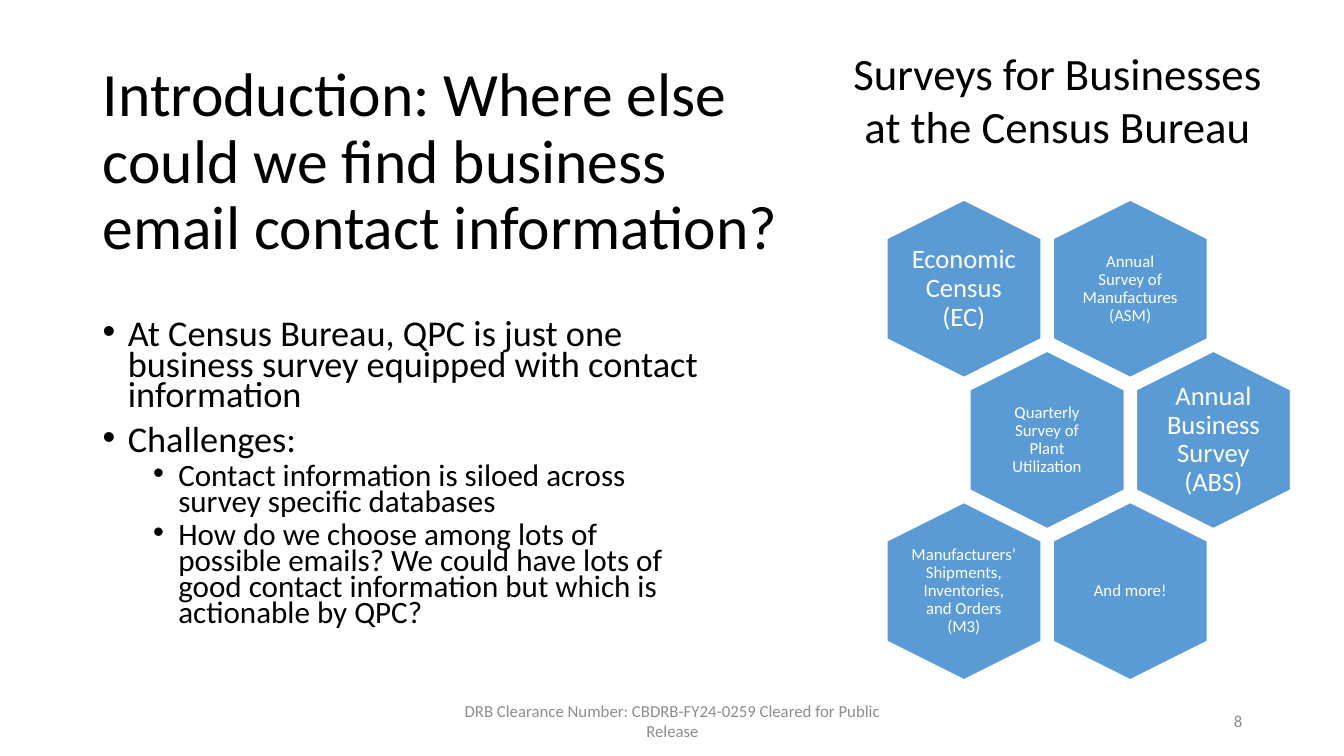
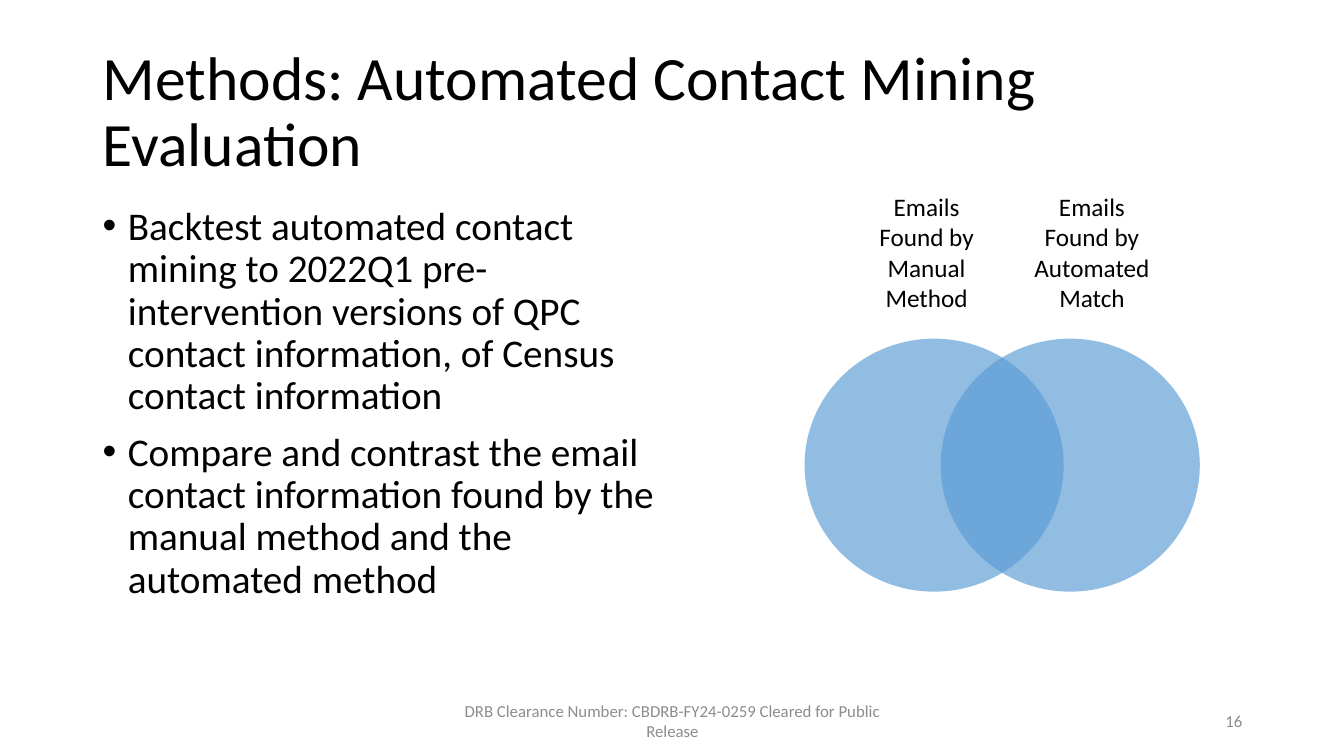
from lxml.etree import SubElement
from pptx import Presentation
from pptx.dml.color import RGBColor
from pptx.enum.shapes import MSO_SHAPE
from pptx.enum.text import MSO_ANCHOR, PP_ALIGN
from pptx.oxml.ns import qn
from pptx.util import Inches, Pt

BLACK = RGBColor(0x00, 0x00, 0x00)
WHITE = RGBColor(0xFF, 0xFF, 0xFF)
GRAY = RGBColor(0x8C, 0x8C, 0x8C)
BLUE = RGBColor(0x5B, 0x9B, 0xD5)
FACE = "Calibri"
NOTE = "DRB Clearance Number: CBDRB-FY24-0259 Cleared for Public Release"

# Text styles: frame, paragraph and font values
MID = {"vertical_anchor": MSO_ANCHOR.MIDDLE}
TITLE = {"frame": MID, "para": {"line_spacing": 0.9}, "font": {"size": Pt(44)}}
HEAD = {"para": {"alignment": PP_ALIGN.CENTER}, "font": {"size": Pt(32)}}
LABEL = {"para": {"alignment": PP_ALIGN.CENTER}, "font": {"size": Pt(18)}}
FOOT = {"frame": MID, "para": {"alignment": PP_ALIGN.CENTER},
        "font": {"size": Pt(12)}, "color": GRAY}
PAGE = {**FOOT, "para": {"alignment": PP_ALIGN.RIGHT}}
CELL = {"para": {"alignment": PP_ALIGN.CENTER, "line_spacing": 0.9},
        "color": WHITE}
SIDES = ("margin_left", "margin_top", "margin_right", "margin_bottom")


def add_text(slide, at, text, style):
    """Add a text box with one styled paragraph."""
    box = slide.shapes.add_textbox(*map(Inches, at))
    frame = box.text_frame
    frame.word_wrap = True
    for name, value in style.get("frame", {}).items():
        setattr(frame, name, value)
    add_para(frame.paragraphs[0], text, style)
    return frame


def add_para(para, text, style):
    """Fill a paragraph, with a bullet if the style has an indent."""
    for name, value in style["para"].items():
        setattr(para, name, value)
    if "indent" in style:
        props = para._p.get_or_add_pPr()
        props.set("marL", str(Inches(style["indent"])))
        props.set("indent", str(Inches(-0.25)))
        SubElement(props, qn("a:buFont"), typeface="Arial")
        SubElement(props, qn("a:buChar"), char="•")
    run = para.add_run()
    run.text = text
    for name, value in {"name": FACE, **style["font"]}.items():
        setattr(run.font, name, value)
    run.font.color.rgb = style.get("color", BLACK)


deck = Presentation()
deck.slide_width, deck.slide_height = Inches(13.33), Inches(7.5)

# What differs: page number, title, boxes, line spacing,
# the text size of each level, and bullets as (level, text)
PAGES = [
    (8, "Introduction: Where else could we find business email contact information?",
     (0.92, 0.4, 7.09, 2.44), (0.92, 3.15, 6.16, 3.35), 0.7, (25.9, 22.2),
     [(0, "At Census Bureau, QPC is just one business survey equipped with contact information"),
      (0, "Challenges:"),
      (1, "Contact information is siloed across survey specific databases"),
      (1, "How do we choose among lots of possible emails? We could have lots of "
          "good contact information but which is actionable by QPC?")]),
    (16, "Methods: Automated Contact Mining Evaluation",
     (0.92, 0.4, 11.51, 1.45), (0.92, 2, 5.75, 5.02), 0.9, (28,),
     [(0, "Backtest automated contact mining to 2022Q1 pre-intervention versions "
          "of QPC contact information, of Census contact information"),
      (0, "Compare and contrast the email contact information found by the "
          "manual method and the automated method")]),
]

# Title, bullets and footer of both slides
slides = []
for page, title, top, body, space, sizes, points in PAGES:
    slide = deck.slides.add_slide(deck.slide_layouts[6])
    slides.append(slide)
    add_text(slide, top, title, TITLE)
    frame = None
    for level, point in points:
        style = {"para": {"level": level, "line_spacing": space},
                 "font": {"size": Pt(sizes[level])},
                 "indent": 0.25 + 0.5 * level}
        if frame is None:
            frame = add_text(slide, body, point, style)
        else:
            style["para"]["space_before"] = Pt((10, 5)[level])
            add_para(frame.add_paragraph(), point, style)
    add_text(slide, (4.42, 6.95, 4.5, 0.4), NOTE, FOOT)
    add_text(slide, (9.42, 6.95, 3, 0.4), str(page), PAGE)
intro, method = slides

# Honeycomb of surveys (name, text size, margin): every second row
# is shifted by half a step
add_text(intro, (8.22, 0.4, 4.54, 1.18),
         "Surveys for Businesses at the Census Bureau", HEAD)
SURVEYS = [
    [("Economic Census (EC)", 19, 0),
     ("Annual Survey of Manufactures (ASM)", 12, 0.05)],
    [("Quarterly Survey of Plant Utilization", 12, 0.05),
     ("Annual Business Survey (ABS)", 19, 0)],
    [("Manufacturers’ Shipments, Inventories, and Orders (M3)", 12, 0),
     ("And more!", 12, 0.05)],
]
for row, names in enumerate(SURVEYS):
    for col, (name, size, margin) in enumerate(names):
        left = 8.68 + 1.65 * (col + row % 2 / 2)
        top = 2.1 + 1.5 * row
        hexa = intro.shapes.add_shape(
            MSO_SHAPE.HEXAGON, *map(Inches, (left, top, 1.76, 1.53)))
        hexa.adjustments[0] = 0.25
        hexa.rotation = 90
        hexa.shadow.inherit = False
        hexa.fill.solid()
        hexa.fill.fore_color.rgb = BLUE
        hexa.line.color.rgb = WHITE
        hexa.line.width = Pt(1)
        inset = dict.fromkeys(SIDES, Inches(margin))
        add_text(intro, (left + 0.35, top + 0.16, 1.06, 1.21), name,
                 {**CELL, "frame": {**MID, **inset}, "font": {"size": Pt(size)}})

# Two overlapping circles with labels above
GROUPS = ["Emails Found by Manual Method", "Emails Found by Automated Match"]
for col, name in enumerate(GROUPS):
    oval = method.shapes.add_shape(
        MSO_SHAPE.OVAL, *map(Inches, (7.98 + 1.35 * col, 3.36, 2.57, 2.51)))
    oval.shadow.inherit = False
    oval.fill.solid()
    oval.fill.fore_color.rgb = BLUE
    tint = oval.fill._xPr.find(qn("a:solidFill"))[0]
    SubElement(tint, qn("a:alpha"), val="66000")
    oval.line.fill.background()
    add_text(method, (8.43 + 1.64 * col, 1.85, 1.52, 1.31), name, LABEL)

deck.save("out.pptx")
